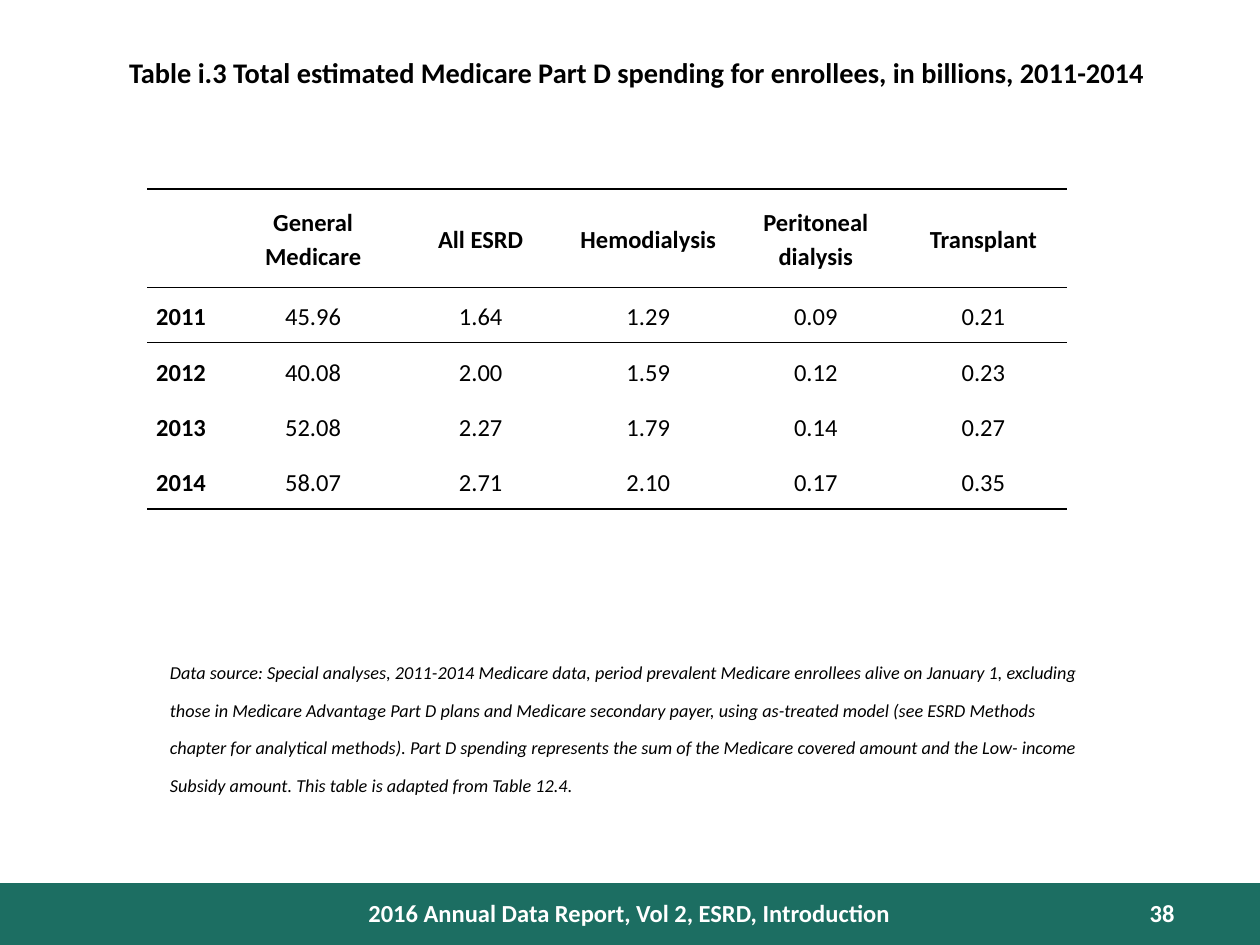
from lxml import etree
from pptx import Presentation
from pptx import util as u
from pptx.dml.color import RGBColor
from pptx.enum import shapes, text
from pptx.oxml.ns import qn

BLACK = RGBColor(0x00, 0x00, 0x00)
WHITE = RGBColor(0xFF, 0xFF, 0xFF)
GREEN = RGBColor(0x1C, 0x6E, 0x62)
WIDTH, HEIGHT = u.Inches(10), u.Inches(7.5)
PLAIN_TABLE = "{2D5ABB26-0587-4C30-8999-92F81FD0307C}"

HEADINGS = ["", "General Medicare", "All ESRD", "Hemodialysis",
            "Peritoneal dialysis", "Transplant"]
SPENDING = [
    ["2011", "45.96", "1.64", "1.29", "0.09", "0.21"],
    ["2012", "40.08", "2.00", "1.59", "0.12", "0.23"],
    ["2013", "52.08", "2.27", "1.79", "0.14", "0.27"],
    ["2014", "58.07", "2.71", "2.10", "0.17", "0.35"],
]
TITLE = ("Table i.3 Total estimated Medicare Part D spending for enrollees, "
         "in billions, 2011-2014")
DATA_SOURCE = (
    "Data source: Special analyses, 2011-2014 Medicare data, period prevalent "
    "Medicare enrollees alive on January 1, excluding those in Medicare "
    "Advantage Part D plans and Medicare secondary payer, using as-treated "
    "model (see ESRD Methods chapter for analytical methods). Part D spending "
    "represents the sum of the Medicare covered amount and the Low- income "
    "Subsidy amount. This table is adapted from Table 12.4.")


class ReportSlide:
    """Draws on one slide; places are percentages of the slide's size."""

    font = "Calibri"
    body_size = 14

    def __init__(self, slide):
        self.slide = slide

    @staticmethod
    def place(left, top, width, height):
        """Turn percentages of the slide's width and height into lengths."""
        return [int(share * side / 100) for share, side in
                zip((left, top, width, height), (WIDTH, HEIGHT) * 2)]

    def set_words(self, paragraph, words, color=BLACK, size=body_size,
                  bold=False, italic=False, align=text.PP_ALIGN.LEFT):
        paragraph.text = words
        paragraph.alignment = align
        for run in paragraph.runs:
            font = run.font
            font.name, font.size = self.font, u.Pt(size)
            font.bold, font.italic = bold, italic
            font.color.rgb = color

    def band(self, share, color):
        bar = self.slide.shapes.add_shape(
            shapes.MSO_SHAPE.RECTANGLE, *self.place(*share))
        bar.shadow.inherit = False
        bar.fill.solid()
        bar.fill.fore_color.rgb = color
        bar.line.fill.background()

    def label(self, share, words, raised=False, **style):
        """Add a text box; raised text is superscript and its box grows."""
        frame = self.slide.shapes.add_textbox(*self.place(*share)).text_frame
        frame.word_wrap = True
        self.set_words(frame.paragraphs[0], words, **style)
        if raised:
            frame.auto_size = text.MSO_AUTO_SIZE.SHAPE_TO_FIT_TEXT
            for run in frame.paragraphs[0].runs:
                run._r.get_or_add_rPr().set("baseline", "30000")
        return frame

    @staticmethod
    def rule(cell, side):
        """Draw a one-point black line on the cell's side, T or B."""
        line = etree.SubElement(cell._tc.get_or_add_tcPr(), qn(f"a:ln{side}"),
                                w=str(u.Pt(1)))
        paint = etree.SubElement(line, qn("a:solidFill"))
        etree.SubElement(paint, qn("a:srgbClr"), val=str(BLACK))

    def table(self, share, rows, column_inches, row_inches):
        table = self.slide.shapes.add_table(
            len(rows), len(rows[0]), *self.place(*share)).table
        table.first_row = table.horz_banding = False
        table._tbl.tblPr.find(qn("a:tableStyleId")).text = PLAIN_TABLE
        for column, width in zip(table.columns, column_inches):
            column.width = u.Inches(width)
        for row, height in zip(table.rows, row_inches):
            row.height = u.Inches(height)
        for r, values in enumerate(rows):
            sides = {0: "TB", 1: "T", len(rows) - 1: "B"}.get(r, "")
            for c, value in enumerate(values):
                cell = table.cell(r, c)
                for side in sides:
                    self.rule(cell, side)
                cell.fill.background()
                cell.vertical_anchor = text.MSO_ANCHOR.MIDDLE
                cell.margin_top = cell.margin_bottom = 0
                cell.margin_left = cell.margin_right = u.Inches(0.07 if r else 0)
                entry = cell.text_frame.paragraphs[0]
                entry.line_spacing = 1.15
                is_year = r > 0 and c == 0
                self.set_words(entry, value, bold=r == 0 or c == 0,
                               align=text.PP_ALIGN.LEFT if is_year
                               else text.PP_ALIGN.CENTER)


def main():
    deck = Presentation()
    deck.slide_width, deck.slide_height = WIDTH, HEIGHT
    page = ReportSlide(deck.slides.add_slide(deck.slide_layouts[6]))
    center, right = text.PP_ALIGN.CENTER, text.PP_ALIGN.RIGHT

    page.band((0, 93.45, 100, 6.55), GREEN)
    title = page.label((0, 4.6, 100, 5.6), TITLE, raised=True, size=28,
                       bold=True, align=center)
    title.margin_left = u.Inches(0.2)
    page.label((84.2, 94.4, 10, 4), "38", color=WHITE, bold=True, align=right)
    page.label((12.5, 68.9, 75, 12.1), DATA_SOURCE, raised=True, size=18,
               italic=True)
    page.table((11.7, 20, 73.2, 33.6), [HEADINGS] + SPENDING,
               [0.65] + [1.33] * 5, [0.78] + [0.44] * 4)
    page.label((25.8, 94.4, 48.3, 4.4),
               "2016 Annual Data Report, Vol 2, ESRD, Introduction",
               color=WHITE, bold=True, align=center)
    deck.save("out.pptx")


if __name__ == "__main__":
    main()
